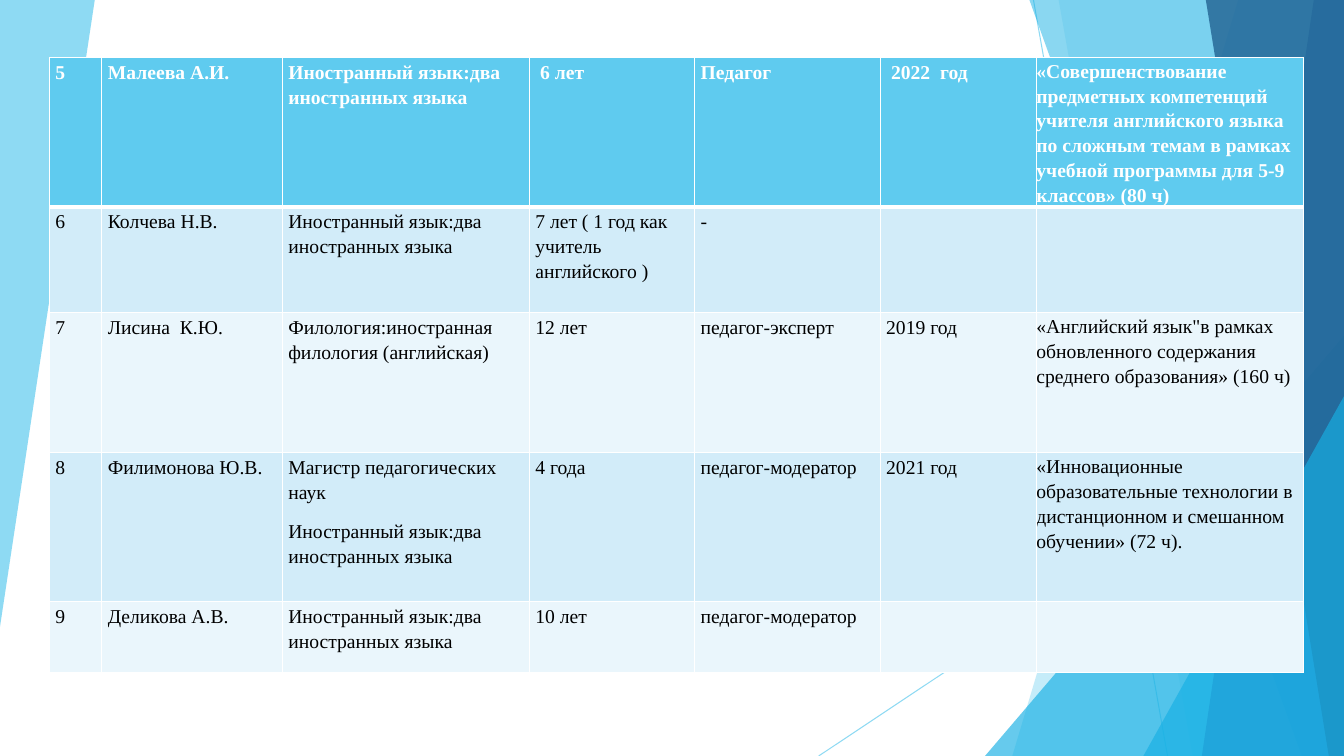
from lxml.etree import SubElement
from pptx import Presentation
from pptx.dml.color import RGBColor
from pptx.enum.shapes import MSO_CONNECTOR as Connector, MSO_SHAPE as Shape
from pptx.oxml.ns import qn
from pptx.util import Inches, Pt

SKY = RGBColor(0x5F, 0xCB, 0xEF)
AZURE = RGBColor(0x17, 0xB0, 0xE4)
BLUE = RGBColor(0x2E, 0x83, 0xC3)
NAVY = RGBColor(0x22, 0x62, 0x92)
BAND_DARK = RGBColor(0xD2, 0xEC, 0xF9)
BAND_LIGHT = RGBColor(0xEA, 0xF6, 0xFC)
WHITE = RGBColor(0xFF, 0xFF, 0xFF)
BLACK = RGBColor(0, 0, 0)

SLIDE_WIDTH, SLIDE_HEIGHT = 13.33, 7.5
COLUMN_WIDTHS = [0.52, 1.79, 2.45, 1.64, 1.84, 1.55, 2.65]
ROW_HEIGHTS = [1.48, 1.05, 1.39, 1.48, 0.7]
LANGUAGES = "Иностранный язык:два иностранных языка"
TEACHERS = [
    ["5", "Малеева А.И.", LANGUAGES, " 6 лет", "Педагог", " 2022  год",
     "«Совершенствование предметных компетенций учителя английского языка "
     "по сложным темам в рамках учебной программы для 5-9 классов» (80 ч)"],
    ["6", "Колчева Н.В.", LANGUAGES, "7 лет ( 1 год как учитель английского )", "-", "", ""],
    ["7", "Лисина  К.Ю.", "Филология:иностранная филология (английская)", "12 лет",
     "педагог-эксперт", "2019 год",
     "«Английский язык\"в рамках обновленного содержания среднего образования» (160 ч)"],
    ["8", "Филимонова Ю.В.", "Магистр педагогических наук\n" + LANGUAGES, "4 года",
     "педагог-модератор", "2021 год",
     "«Инновационные образовательные технологии в дистанционном и смешанном обучении» (72 ч)."],
    ["9", "Деликова А.В.", LANGUAGES, "10 лет", "педагог-модератор", "", ""],
]


def set_alpha(properties, percent):
    color = next(properties.iter(qn("a:srgbClr")))
    SubElement(color, qn("a:alpha"), val=str(percent * 1000))


def paint(shape, color, alpha):
    shape.shadow.inherit = False
    shape.fill.solid()
    shape.fill.fore_color.rgb = color
    shape.line.fill.background()
    set_alpha(shape._element.spPr, alpha)


def add_polygon(slide, points, color, alpha):
    corners = [(Inches(x), Inches(y)) for x, y in points]
    builder = slide.shapes.build_freeform(*corners[0])
    builder.add_line_segments(corners[1:], close=True)
    paint(builder.convert_to_shape(), color, alpha)


def add_ray(slide, start, end):
    ray = slide.shapes.add_connector(
        Connector.STRAIGHT, *[Inches(value) for value in (*start, *end)])
    ray.line.color.rgb = SKY
    ray.line.width = Pt(0.75)
    properties = ray._element.spPr
    set_alpha(properties, 70)
    SubElement(properties, qn("a:effectLst"))


def add_corner(slide, right, bottom, width, height):
    corner = slide.shapes.add_shape(
        Shape.ISOSCELES_TRIANGLE, Inches(right - width), Inches(bottom - height),
        Inches(width), Inches(height))
    corner.adjustments[0] = 1
    paint(corner, AZURE, 66)


def add_left_shard(slide, left, top, width, height):
    add_polygon(slide, [(left, top), (left + width, top), (left, top + height)], SKY, 70)


def add_right_facets(slide, left, top, width, height):
    right, bottom = left + width, top + height

    def add_facet(top_inset, bottom_inset, color, alpha):
        add_polygon(slide, [(right - top_inset, top), (right, top), (right, bottom),
                            (right - bottom_inset, bottom)], color, alpha)

    add_ray(slide, (right - 3.08, top), (right - 1.75, bottom))
    add_ray(slide, (right, top + 4.03), (left, bottom))
    add_facet(1.05, 3.29, SKY, 36)
    add_facet(2.83, 1.5, SKY, 20)
    add_corner(slide, right, bottom, 3.56, 4.17)
    add_facet(3.12, 0.42, AZURE, 50)
    add_facet(0.3, 1.41, BLUE, 70)
    add_facet(1.37, 0.15, NAVY, 80)
    add_corner(slide, right, bottom, 1.99, 3.57)


def write_text(frame, text, size=14, color=BLACK, bold=False, font="Times New Roman"):
    for index, line in enumerate(text.split("\n")):
        paragraph = frame.add_paragraph() if index else frame.paragraphs[0]
        paragraph.line_spacing = 1.15
        paragraph.space_after = Pt(10)
        run = paragraph.add_run()
        run.text = line
        run.font.name = font
        run.font.size = Pt(size)
        run.font.bold = bold
        run.font.color.rgb = color


def set_borders(cell, **widths):
    properties = cell._tc.get_or_add_tcPr()
    for side, width in widths.items():
        border = SubElement(properties, qn(f"a:ln{side}"), w=str(Pt(width)))
        fill = SubElement(border, qn("a:solidFill"))
        SubElement(fill, qn("a:srgbClr"), val=str(WHITE))


def add_teacher_table(slide, left, top, width, height):
    table = slide.shapes.add_table(
        len(ROW_HEIGHTS), len(COLUMN_WIDTHS),
        Inches(left), Inches(top), Inches(width), Inches(height)).table
    for column, column_width in zip(table.columns, COLUMN_WIDTHS):
        column.width = Inches(column_width * width / sum(COLUMN_WIDTHS))
    for row, row_height in zip(table.rows, ROW_HEIGHTS):
        row.height = Inches(row_height * height / sum(ROW_HEIGHTS))
    last_column = len(COLUMN_WIDTHS) - 1
    for row_index, teacher in enumerate(TEACHERS):
        is_header = row_index == 0
        band = SKY if is_header else BAND_DARK if row_index % 2 else BAND_LIGHT
        for column_index, text in enumerate(teacher):
            cell = table.cell(row_index, column_index)
            set_borders(cell, L=1, R=1, T=3 if row_index == 1 else 1, B=3 if is_header else 1)
            cell.fill.solid()
            cell.fill.fore_color.rgb = band
            is_course = column_index == last_column
            cell.margin_left = cell.margin_right = Inches(0 if is_course else 0.06)
            cell.margin_top = Inches(0 if is_course else 0.01)
            cell.margin_bottom = 0
            if text:
                write_text(cell.text_frame, text, bold=is_header,
                           color=WHITE if is_header else BLACK)


def main():
    deck = Presentation()
    deck.slide_width = Inches(SLIDE_WIDTH)
    deck.slide_height = Inches(SLIDE_HEIGHT)
    slide = deck.slides.add_slide(deck.slide_layouts[6])
    add_left_shard(slide, 0, 0, 0.94, 6.22)
    add_right_facets(slide, 8.12, 0, SLIDE_WIDTH - 8.12, SLIDE_HEIGHT)
    add_teacher_table(slide, 0.49, 0.57, sum(COLUMN_WIDTHS), sum(ROW_HEIGHTS))
    deck.save("out.pptx")


if __name__ == "__main__":
    main()
